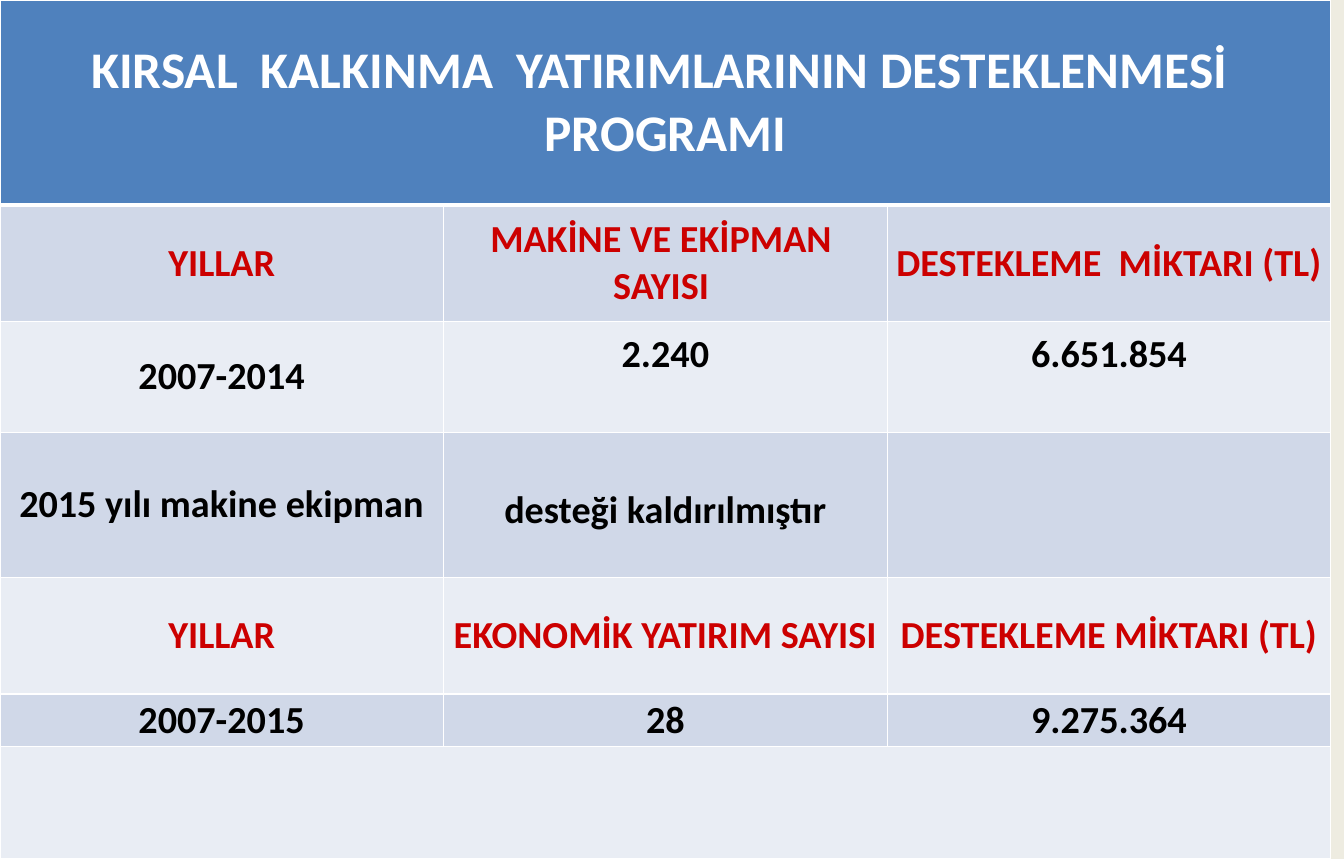
import pptx
import pptx.util
import pptx.dml.color
import pptx.enum.text
import pptx.oxml
import pptx.oxml.ns

Cm = pptx.util.Cm
Pt = pptx.util.Pt
RGBColor = pptx.dml.color.RGBColor

WHITE = RGBColor(0xFF, 0xFF, 0xFF)
BLACK = RGBColor(0x00, 0x00, 0x00)
RED = RGBColor(0xCC, 0x00, 0x00)
BLUE = RGBColor(0x4F, 0x81, 0xBD)
BANDS = [RGBColor(0xE9, 0xED, 0xF4), RGBColor(0xD0, 0xD8, 0xE8)]
CREAM = RGBColor(0xEE, 0xEC, 0xE1)

WIDTH = 11.89
HEIGHTS = [5.49, 3.12, 2.97, 3.89, 3.12, 1.4, 3.02]
ROWS = [
    ["KIRSAL  KALKINMA  YATIRIMLARININ DESTEKLENMESİ  PROGRAMI", "", ""],
    ["YILLAR", "MAKİNE VE EKİPMAN  SAYISI ", "DESTEKLEME  MİKTARI (TL)"],
    ["2007-2014", "2.240", "6.651.854"],
    ["2015 yılı makine ekipman", "desteği kaldırılmıştır", ""],
    ["YILLAR", "EKONOMİK YATIRIM SAYISI", "DESTEKLEME MİKTARI (TL)"],
    ["2007-2015", "28", "9.275.364"],
    ["", "", ""],
]
TITLE, LAST = 0, 6
HEADS = (1, 4)
INSETS = {(2, 1): (0, 1.2), (2, 2): (0, 1.2), (3, 1): (0.3, 0)}


class Deck:
    font = "Calibri"

    def __init__(self, wide, high):
        self.prs = pptx.Presentation()
        self.prs.slide_width = Cm(wide)
        self.prs.slide_height = Cm(high)
        self.slide = self.prs.slides.add_slide(self.prs.slide_layouts[6])

    def back(self, color):
        fill = self.slide.background.fill
        fill.solid()
        fill.fore_color.rgb = color

    def table(self, heights, width, count):
        frame = self.slide.shapes.add_table(
            len(heights), count, 0, 0, Cm(width * count), Cm(sum(heights)))
        grid = frame.table
        for col in grid.columns:
            col.width = Cm(width)
        for row, high in zip(grid.rows, heights):
            row.height = Cm(high)
        return grid

    def cell(self, cell, text, size, color, fill, inset=(0, 0)):
        cell.fill.solid()
        cell.fill.fore_color.rgb = fill
        cell.margin_left = cell.margin_right = 0
        cell.margin_top, cell.margin_bottom = map(Cm, inset)
        cell.vertical_anchor = pptx.enum.text.MSO_ANCHOR.MIDDLE
        if text:
            cell.text = text
            para = cell.text_frame.paragraphs[0]
            para.alignment = pptx.enum.text.PP_ALIGN.CENTER
            para.font.name = self.font
            para.font.size = Pt(size)
            para.font.bold = True
            para.font.color.rgb = color

    def edges(self, cell, color, **widths):
        props = cell._tc.get_or_add_tcPr()
        for spot, side in enumerate("LRTB"):
            width = Pt(widths.get(side, 1))
            line = pptx.oxml.parse_xml(
                f'<a:ln{side} {pptx.oxml.ns.nsdecls("a")} w="{width}">'
                f'<a:solidFill><a:srgbClr val="{color}"/></a:solidFill>'
                f'</a:ln{side}>')
            props.insert(spot, line)

    def save(self):
        self.prs.save("out.pptx")


def main():
    deck = Deck(36.02, 23.01)
    deck.back(CREAM)
    grid = deck.table(HEIGHTS, WIDTH, 3)
    for r, row in enumerate(ROWS):
        size = 39 if r == TITLE else 29
        color = WHITE if r == TITLE else RED if r in HEADS else BLACK
        fill = BLUE if r == TITLE else BANDS[r % 2]
        rims = {TITLE: {"B": 3}, 1: {"T": 3}}.get(r, {})
        for c, text in enumerate(row):
            cell = grid.cell(r, c)
            deck.cell(cell, text, size, color, fill, INSETS.get((r, c), (0, 0)))
            deck.edges(cell, WHITE, **rims)
    for r in (TITLE, LAST):
        grid.cell(r, 0).merge(grid.cell(r, 2))
    deck.save()


if __name__ == "__main__":
    main()
